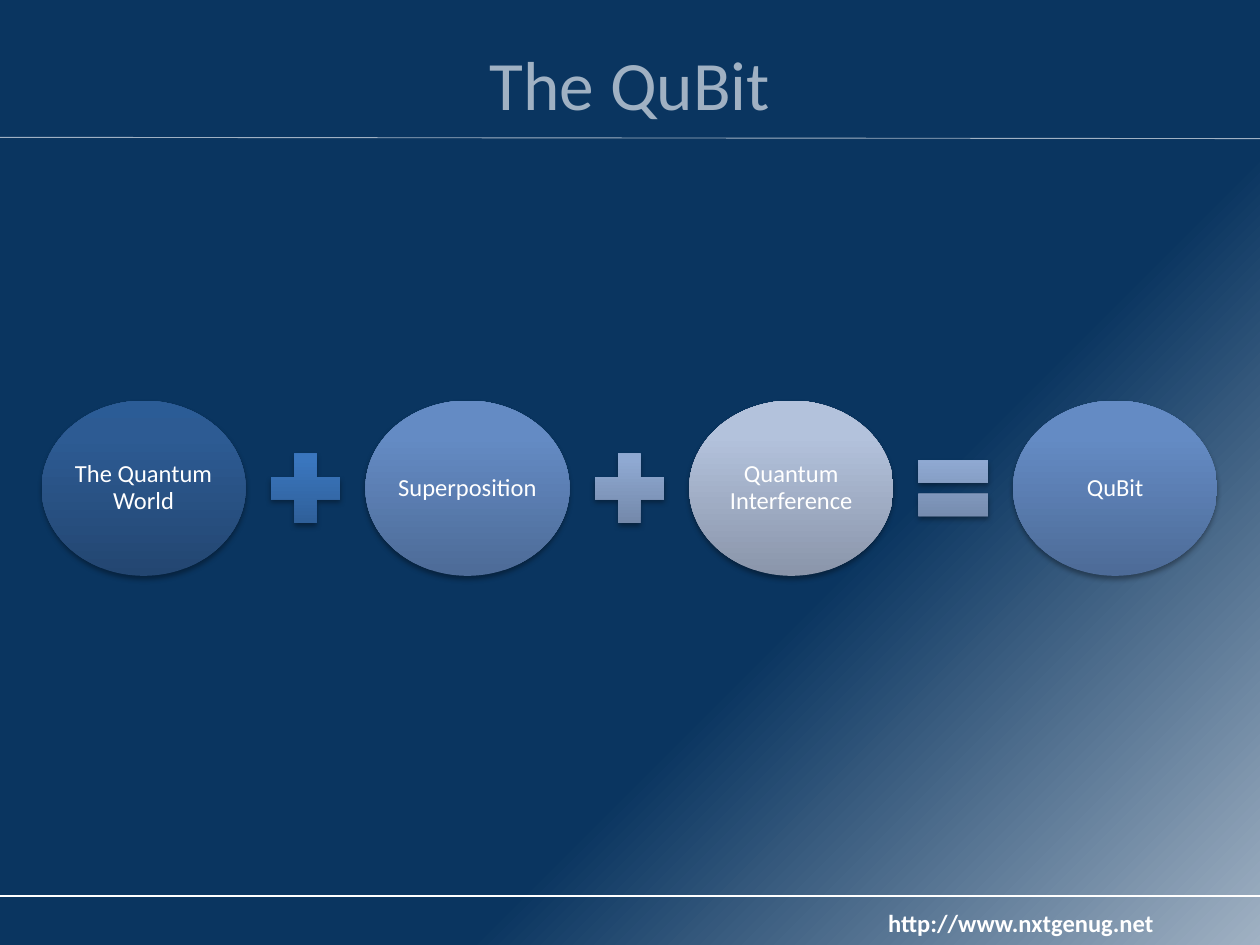
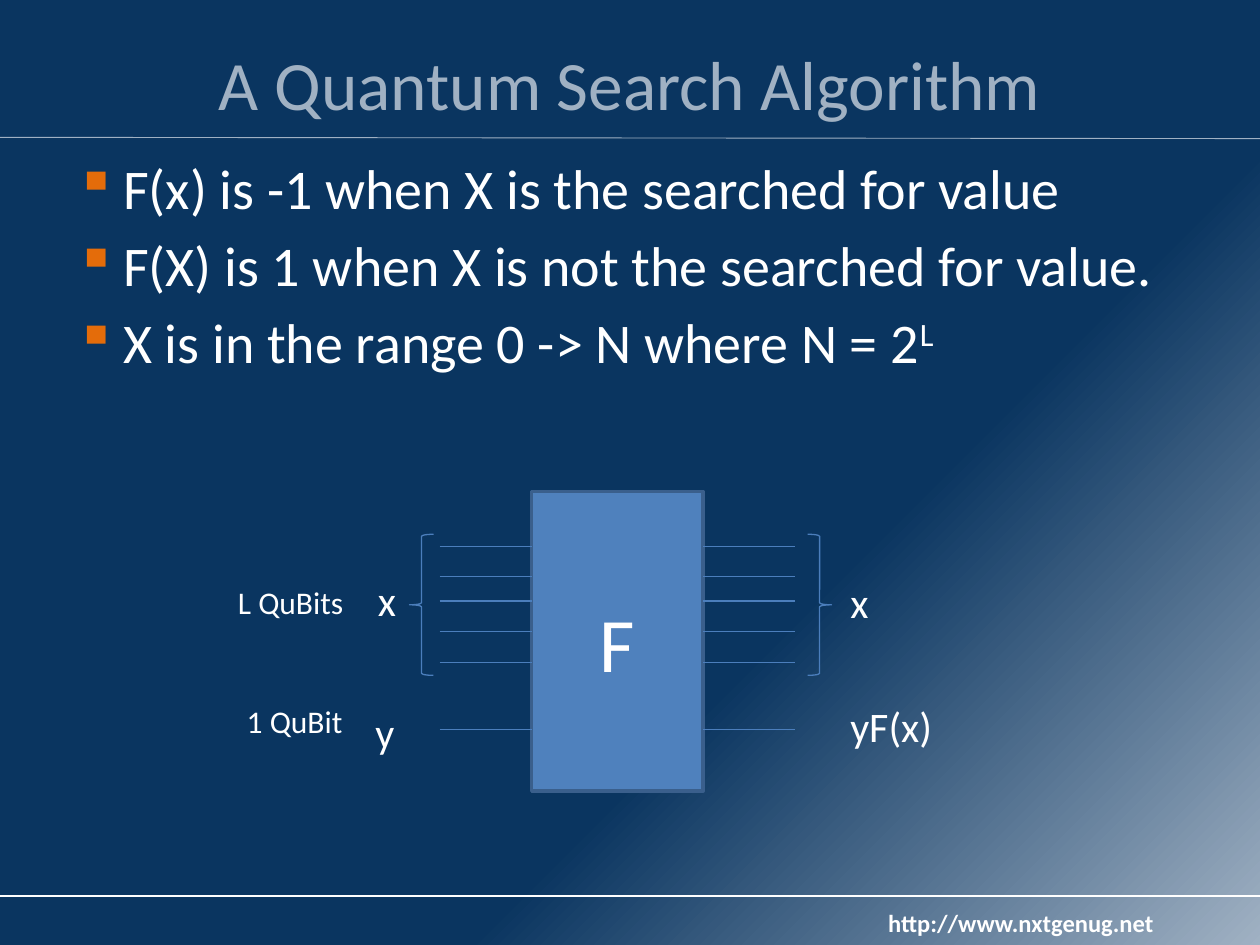
from dataclasses import dataclass

from pptx import Presentation
from pptx import util as u
from pptx.dml.color import RGBColor
from pptx.enum import shapes, text
from pptx.oxml import parse_xml
from pptx.oxml.ns import nsdecls, qn

# Slide grid: 100 columns by 75 rows of square cells
WIDTH, HEIGHT = u.Inches(10), u.Inches(7.5)
COLUMNS, ROWS = 100, 75
CELL = WIDTH // COLUMNS

FONT = "Calibri"
WHITE = RGBColor(0xFF, 0xFF, 0xFF)
NAVY = RGBColor(0x0A, 0x35, 0x60)
MIST = RGBColor(0xA0, 0xB1, 0xC3)
ORANGE = RGBColor(0xE4, 0x6C, 0x0A)
BLOCK_FILL = RGBColor(0x4F, 0x81, 0xBD)
BLOCK_EDGE = RGBColor(0x3A, 0x5F, 0x8C)
WIRE = RGBColor(0x4B, 0x7E, 0xBC)


def shades(*colours):
    """Pair three hex colours with the stops of a glossy gradient."""
    return list(zip((0, 80, 100), map(RGBColor.from_string, colours)))


DEEP = shades("234671", "2D5B93", "2B5C96")
BRIGHT = shades("2D5B92", "3A76BE", "3876C2")
MEDIUM = shades("4D6B97", "648BC4", "638BC7")
SOFT = shades("6E82A2", "8FA9D2", "8FAAD5")
PALE = shades("8A95AA", "B3C2DC", "B4C3DE")
UPWARD = '<a:lin ang="16200000" scaled="0"/>'
FROM_CORNER = '<a:path path="circle"><a:fillToRect l="100000" t="100000"/></a:path>'
SHADOW = (f'<a:outerShdw {nsdecls("a")} blurRad="39400" dist="22900" dir="5400000" '
          'rotWithShape="0"><a:srgbClr val="000000"><a:alpha val="35000"/>'
          '</a:srgbClr></a:outerShdw>')


@dataclass
class Box:
    """A rectangle in grid cells."""
    left: float
    top: float
    width: float
    height: float

    def inside(self, left, top, width, height):
        return Box(self.left + left, self.top + top, width, height)

    def emu(self):
        return [round(n * CELL) for n in (self.left, self.top, self.width, self.height)]


PAGE = Box(0, 0, COLUMNS, ROWS)


# Drawing helpers
def paint_gradient(owner, fill, stops, direction):
    fill.background()
    blank = owner.element.find(".//" + qn("a:noFill"))
    stop_xml = "".join(f'<a:gs pos="{position * 1000}"><a:srgbClr val="{colour}"/></a:gs>'
                       for position, colour in stops)
    gradient = parse_xml(f'<a:gradFill {nsdecls("a")} rotWithShape="1">'
                         f'<a:gsLst>{stop_xml}</a:gsLst>{direction}</a:gradFill>')
    blank.getparent().replace(blank, gradient)


def style_text(paragraph, size, colour=WHITE, bold=False):
    for run in paragraph.runs:
        run.font.name = FONT
        run.font.size = u.Pt(size)
        run.font.bold = bold
        run.font.color.rgb = colour


def add_label(slide, box, words, size, colour=WHITE, bold=False, centred=False):
    label = slide.shapes.add_textbox(*box.emu())
    frame = label.text_frame
    frame.text = words
    frame.word_wrap = centred
    if centred:
        frame.vertical_anchor = text.MSO_ANCHOR.MIDDLE
        frame.paragraphs[0].alignment = text.PP_ALIGN.CENTER
    else:
        frame.auto_size = text.MSO_AUTO_SIZE.SHAPE_TO_FIT_TEXT
    style_text(frame.paragraphs[0], size, colour, bold)


def add_rule(slide, box, colour, weight):
    left, top, width, height = box.emu()
    rule = slide.shapes.add_connector(shapes.MSO_CONNECTOR.STRAIGHT,
                                      left, top, left + width, top + height)
    rule.line.color.rgb = colour
    rule.line.width = u.Pt(weight)
    rule.element.spPr.append(parse_xml(f'<a:effectLst {nsdecls("a")}/>'))


def add_plain_shape(slide, kind, box):
    shape = slide.shapes.add_shape(kind, *box.emu())
    shape.shadow.inherit = False
    shape.line.fill.background()
    return shape


def add_glossy_shape(slide, kind, box, stops):
    shape = add_plain_shape(slide, kind, box)
    paint_gradient(shape, shape.fill, stops, UPWARD)
    shape.element.spPr.find(qn("a:effectLst")).append(parse_xml(SHADOW))
    return shape


def centre_text(shape, words, size):
    frame = shape.text_frame
    frame.text = words
    frame.word_wrap = True
    frame.vertical_anchor = text.MSO_ANCHOR.MIDDLE
    frame.paragraphs[0].alignment = text.PP_ALIGN.CENTER
    style_text(frame.paragraphs[0], size)
    return frame


# Shared background, title and footer
def add_base_slide(presentation, title):
    slide = presentation.slides.add_slide(presentation.slide_layouts[6])
    paint_gradient(slide, slide.background.fill, [(0, MIST), (36, NAVY)], FROM_CORNER)
    add_rule(slide, PAGE.inside(0, 71.1, COLUMNS, 0), WHITE, 1.5)
    add_label(slide, PAGE.inside(69.5, 71.6, 23.2, 3.4), "http://www.nxtgenug.net", 14, bold=True)
    add_rule(slide, PAGE.inside(0, 10.9, COLUMNS, 0.1), MIST, 0.5)
    add_label(slide, PAGE.inside(5, 3, 90, 7.2), title, 39.6, MIST, centred=True)
    return slide


# Row of ellipses joined by operators
def add_equation(slide, box, terms, operators):
    ellipse_width, operator_size, gap = 16.2, 7.5, 1
    pitch = ellipse_width + operator_size + 2 * gap
    for index, (words, stops) in enumerate(terms):
        ellipse = add_glossy_shape(slide, shapes.MSO_SHAPE.OVAL,
                                   box.inside(index * pitch, 0, ellipse_width, box.height), stops)
        frame = centre_text(ellipse, words, 14)
        frame.margin_left = frame.margin_right = u.Inches(0.02)
        frame.margin_top = frame.margin_bottom = u.Inches(0.02)
        frame.paragraphs[0].line_spacing = 0.9
    for index, (kind, stops) in enumerate(operators):
        add_glossy_shape(slide, kind,
                         box.inside(index * pitch + ellipse_width + gap,
                                    (box.height - operator_size) / 2,
                                    operator_size, operator_size), stops)


# Bulleted list; each item is a line and an optional superscript
def add_bullets(slide, box, items):
    frame = slide.shapes.add_textbox(*box.emu()).text_frame
    frame.word_wrap = True
    for index, (words, superscript) in enumerate(items):
        paragraph = frame.paragraphs[0] if index == 0 else frame.add_paragraph()
        paragraph.text = words
        properties = paragraph._p.get_or_add_pPr()
        properties.set("marL", str(u.Inches(0.38)))
        properties.set("indent", str(-u.Inches(0.38)))
        properties.append(parse_xml(
            f'<a:buClr {nsdecls("a")}><a:srgbClr val="{ORANGE}"/></a:buClr>'))
        properties.append(parse_xml(f'<a:buChar {nsdecls("a")} char="▪"/>'))
        if index:
            paragraph.space_before = u.Pt(5.5)
        if superscript:
            raised = paragraph.add_run()
            raised.text = superscript
            raised._r.get_or_add_rPr().set("baseline", "30000")
        style_text(paragraph, 32)


# Function block with its input and output wires
def add_circuit(slide, box):
    block_left, block_width, wire_length = 24.3, 13.6, 7.3
    block = add_plain_shape(slide, shapes.MSO_SHAPE.RECTANGLE,
                            box.inside(block_left, 0, block_width, box.height))
    block.fill.solid()
    block.fill.fore_color.rgb = BLOCK_FILL
    block.line.color.rgb = BLOCK_EDGE
    block.line.width = u.Pt(2)
    centre_text(block, "F", 44)

    for wire_left in (block_left - wire_length, block_left + block_width):
        for wire_top in (4.35, 6.75, 8.7, 11.1, 13.6, 18.9):
            add_rule(slide, box.inside(wire_left, wire_top, wire_length, 0), WIRE, 0.75)

    for brace_left, rotation in ((14.6, 180), (46.2, 0)):
        brace = add_plain_shape(slide, shapes.MSO_SHAPE.RIGHT_BRACE,
                                box.inside(brace_left, 3.4, 1.9, 11.2))
        brace.rotation = rotation
        brace.fill.background()
        brace.line.color.rgb = WIRE
        brace.line.width = u.Pt(0.75)

    for words, size, left, top, width, height in (
            ("L QuBits", 18, 0, 6.8, 10.5, 4),
            ("1 QuBit", 18, 0.7, 16.2, 9.7, 4),
            ("x", 24, 11.1, 6.1, 3.5, 5),
            ("y", 24, 10.9, 16.6, 3.5, 5),
            ("x", 24, 48.6, 6.3, 3.5, 5),
            ("yF(x)", 24, 48.6, 16.1, 8.6, 5)):
        add_label(slide, box.inside(left, top, width, height), words, size)


def add_qubit_slide(presentation):
    slide = add_base_slide(presentation, "The QuBit")
    plus, equal = shapes.MSO_SHAPE.MATH_PLUS, shapes.MSO_SHAPE.MATH_EQUAL
    add_equation(slide, PAGE.inside(3.3, 31.8, 93.3, 13.9),
                 [("The Quantum World", DEEP), ("Superposition", MEDIUM),
                  ("Quantum Interference", PALE), ("QuBit", MEDIUM)],
                 [(plus, BRIGHT), (plus, SOFT), (equal, SOFT)])


def add_search_slide(presentation):
    slide = add_base_slide(presentation, "A Quantum Search Algorithm")
    add_bullets(slide, PAGE.inside(5, 11.7, 90, 24.8),
                [("F(x) is -1 when X is the searched for value", ""),
                 ("F(X) is 1 when X is not the searched for value.", ""),
                 ("X is in the range 0 -> N where N = 2", "L")])
    add_circuit(slide, PAGE.inside(17.9, 39, 57.2, 23.8))


def main():
    presentation = Presentation()
    presentation.slide_width, presentation.slide_height = WIDTH, HEIGHT
    add_qubit_slide(presentation)
    add_search_slide(presentation)
    presentation.save("out.pptx")


if __name__ == "__main__":
    main()
